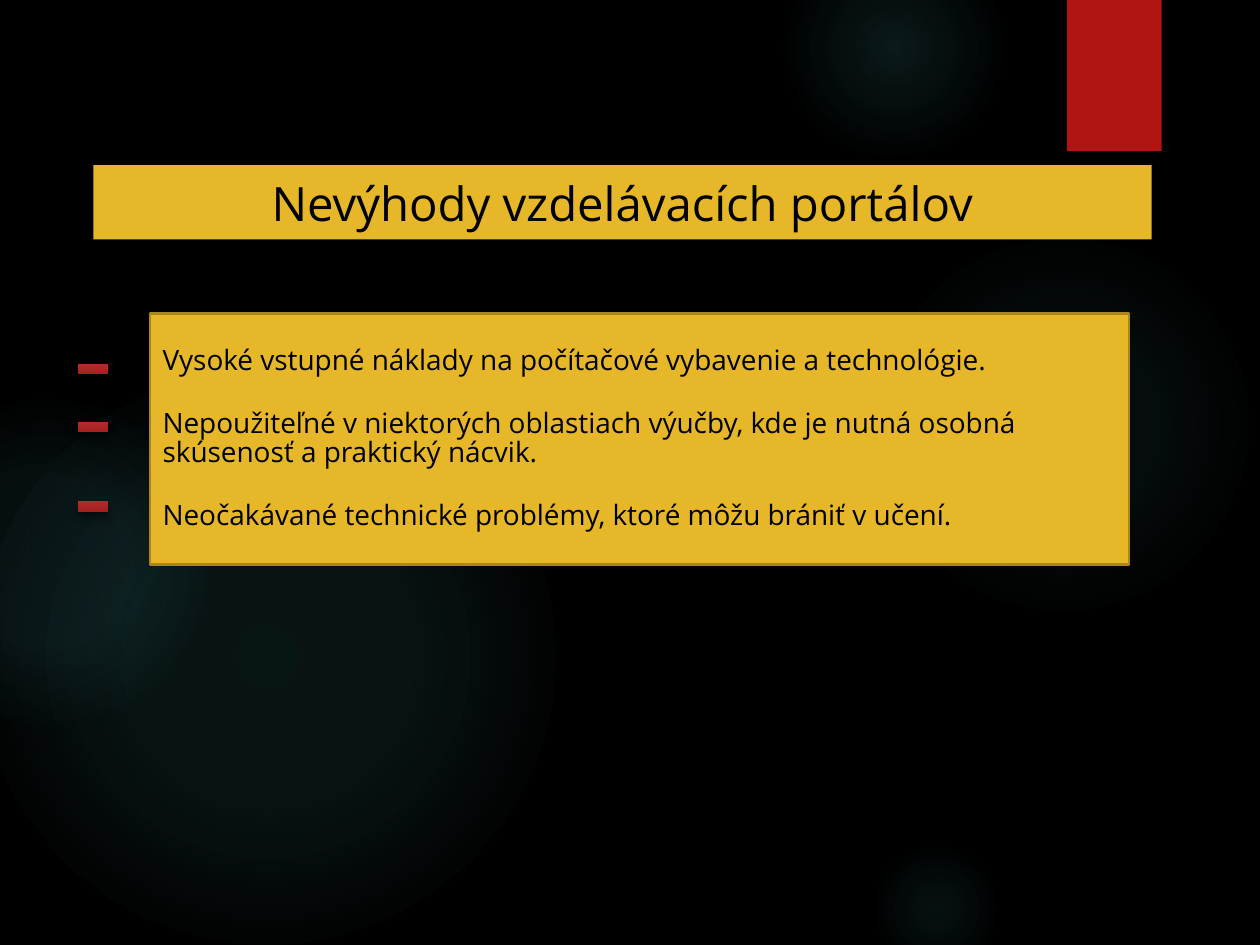
from lxml.etree import SubElement
from pptx import Presentation
from pptx.dml.color import RGBColor
from pptx.enum.shapes import MSO_SHAPE
from pptx.enum.text import MSO_ANCHOR, MSO_AUTO_SIZE, PP_ALIGN
from pptx.oxml import parse_xml
from pptx.oxml.ns import nsdecls, qn
from pptx.util import Inches, Pt

BLACK = RGBColor(0x00, 0x00, 0x00)
GOLD = RGBColor(0xE6, 0xB7, 0x29)
DARK_GOLD = RGBColor(0xAA, 0x87, 0x1E)
RED = RGBColor(0xB0, 0x15, 0x13)
LIGHT_RED = RGBColor(0xC9, 0x3B, 0x3A)
DARK_RED = RGBColor(0x8D, 0x11, 0x0F)
TEAL = RGBColor(0x50, 0xB9, 0xC1)
FONT = "Open Sans"

deck = Presentation()
deck.slide_width, deck.slide_height = Inches(10), Inches(7.5)
CELL = deck.slide_width / 100  # square grid, 100 columns by 75 rows
slide = deck.slides.add_slide(deck.slide_layouts[1])
slide.background.fill.solid()
slide.background.fill.fore_color.rgb = BLACK


def grid(*cells):
    return [round(cell * CELL) for cell in cells]


def add_shadow(shape, alpha, blur, distance):
    shape._element.spPr.append(parse_xml(
        f'<a:effectLst {nsdecls("a")}><a:outerShdw blurRad="{Pt(blur)}" '
        f'dist="{Pt(distance)}" dir="5400000" algn="ctr" rotWithShape="0">'
        f'<a:srgbClr val="{BLACK}"><a:alpha val="{alpha * 1000}"/></a:srgbClr>'
        '</a:outerShdw></a:effectLst>'))


# Soft glows: left, top, diameter, then (position, opacity) of each stop
glows = [
    (68.9, 18.3, 30.8, [(0, 7), (36, 6), (69, 0)]),
    (62.2, -5, 17.5, [(0, 14), (36, 7), (73, 0)]),
    (68.9, 66.7, 10.8, [(0, 9), (36, 5), (66, 0)]),
    (-1.7, 29.2, 45.8, [(0, 11), (36, 10), (75, 0)]),
    (-9.2, 31.7, 25.8, [(0, 8), (36, 8), (72, 0)]),
]
for left, top, diameter, stops in glows:
    glow = slide.shapes.add_shape(MSO_SHAPE.OVAL, *grid(left, top, diameter, diameter))
    glow.shadow.inherit = False
    glow.line.fill.background()
    stop_xml = "".join(
        f'<a:gs pos="{position * 1000}"><a:srgbClr val="{TEAL}">'
        f'<a:alpha val="{opacity * 1000}"/></a:srgbClr></a:gs>'
        for position, opacity in stops)
    glow._element.spPr.find(qn("a:prstGeom")).addnext(parse_xml(
        f'<a:gradFill {nsdecls("a")}><a:gsLst>{stop_xml}</a:gsLst><a:path path="circle">'
        '<a:fillToRect l="50000" t="50000" r="50000" b="50000"/></a:path></a:gradFill>'))

# Red tab at the top edge
tab = slide.shapes.add_shape(MSO_SHAPE.RECTANGLE, *grid(84.7, 0, 7.5, 12))
tab.fill.solid()
tab.fill.fore_color.rgb = RED
tab.line.fill.background()
add_shadow(tab, 45, 3, 2)

# Title and drawbacks, brought in front of the glows
title, drawbacks = slide.shapes.title, slide.placeholders[1]
for panel, place in ((title, (7.4, 13.1, 84, 5.9)), (drawbacks, (11.9, 24.9, 77.7, 19.9))):
    panel.left, panel.top, panel.width, panel.height = grid(*place)
    panel.fill.solid()
    panel.fill.fore_color.rgb = GOLD
    panel.text_frame.auto_size = MSO_AUTO_SIZE.NONE
    panel.text_frame.vertical_anchor = MSO_ANCHOR.MIDDLE
    slide.shapes._spTree.append(panel._element)

title.text_frame.text = "Nevýhody vzdelávacích portálov"
heading = title.text_frame.paragraphs[0]
heading.alignment = PP_ALIGN.CENTER
heading.font.name, heading.font.size = FONT, Pt(27)
heading.font.color.rgb = BLACK

drawbacks.line.color.rgb = DARK_GOLD
drawbacks.line.width = Pt(1.5)
drawbacks.text_frame.text = "\n".join([
    "Vysoké vstupné náklady na počítačové vybavenie a technológie.",
    "Nepoužiteľné v niektorých oblastiach výučby, kde je nutná osobná "
    "skúsenosť a praktický nácvik.",
    "Neočakávané technické problémy, ktoré môžu brániť v učení.",
])
for number, drawback in enumerate(drawbacks.text_frame.paragraphs):
    drawback.line_spacing = 0.88
    drawback.space_before = Pt(19 if number else 0)
    drawback.font.name, drawback.font.size = FONT, Pt(16)
    drawback.font.color.rgb = BLACK
    properties = drawback._p.get_or_add_pPr()
    properties.set("marL", "0")
    properties.set("indent", "0")
    properties.insert_element_before(
        parse_xml(f'<a:buNone {nsdecls("a")}/>'), "a:tabLst", "a:defRPr", "a:extLst")

# Minus signs beside the drawbacks
for top in (27.7, 32.3, 38.6):
    minus = slide.shapes.add_shape(MSO_SHAPE.MATH_MINUS, *grid(5.8, top, 3.2, 3.2))
    minus.fill.gradient()
    minus.fill.gradient_angle = 270
    for stop, colour in zip(minus.fill.gradient_stops, (LIGHT_RED, DARK_RED)):
        stop.color.rgb = colour
    minus.line.fill.background()
    add_shadow(minus, 60, 5, 3)

deck.save("out.pptx")
